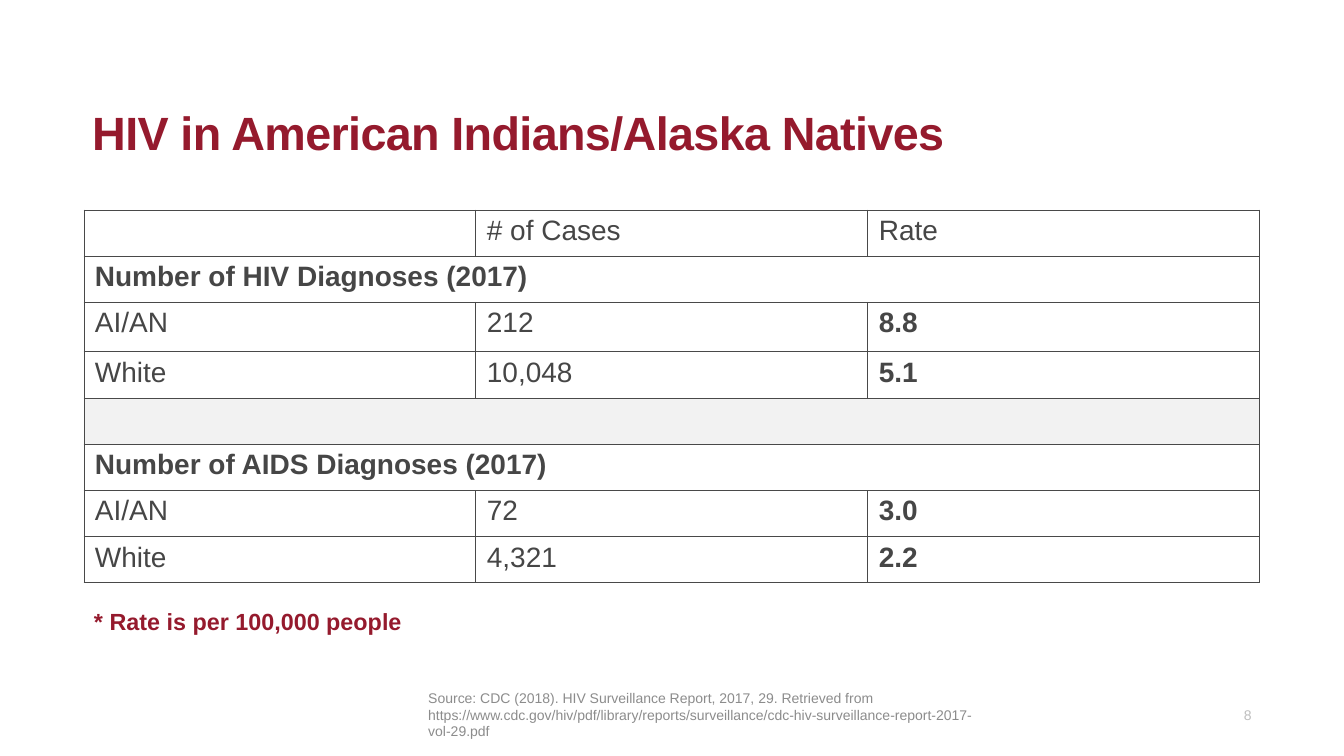
from dataclasses import dataclass, field

from lxml import etree
from pptx import Presentation
from pptx.dml.color import RGBColor
from pptx.enum.text import MSO_ANCHOR, PP_ALIGN
from pptx.oxml.ns import qn
from pptx.util import Inches, Pt

TOP, MID, LOW = MSO_ANCHOR.TOP, MSO_ANCHOR.MIDDLE, MSO_ANCHOR.BOTTOM
LEFT, RIGHT = PP_ALIGN.LEFT, PP_ALIGN.RIGHT

HUES = {
    "red": "951A2D",
    "text": "464646",
    "line": "494949",
    "band": "F2F2F2",
    "note": "8C8C8C",
    "page": "BEBEBE",
}

# Slide grid: 16 columns by 9 rows
WIDE, HIGH = Inches(16), Inches(9)
COL, ROW = WIDE / 16, HIGH / 9


@dataclass
class Label:
    text: str
    left: float
    top: float
    cols: float
    rows: float
    size: int
    hue: str
    bold: bool = False
    anchor: MSO_ANCHOR = TOP
    align: PP_ALIGN = LEFT
    pad: float = 0.05
    lead: float = 1.0
    track: int = 0


@dataclass
class Line:
    cells: list[str] = field(default_factory=list)
    rows: float = 0.55
    head: bool = False
    gap: bool = False


LABELS = [
    Label("HIV in American Indians/Alaska Natives", 1, 0.5, 14, 1.5, 40, "red",
          bold=True, anchor=LOW, pad=0.1, lead=0.85, track=-50),
    Label("8", 13, 8.28, 2, 0.45, 12, "page", anchor=MID, align=RIGHT),
    Label("Source: CDC (2018). HIV Surveillance Report, 2017, 29. Retrieved from "
          "https://www.cdc.gov/hiv/pdf/library/reports/surveillance/"
          "cdc-hiv-surveillance-report-2017-vol-29.pdf",
          5, 8.28, 7, 0.45, 12, "note", anchor=MID, pad=0.1),
    Label("* Rate is per 100,000 people", 1.02, 7.18, 4.92, 0.44, 20, "red", bold=True),
]

LINES = [
    Line(["", "# of Cases", "Rate"]),
    Line(["Number of HIV Diagnoses (2017)"], head=True),
    Line(["AI/AN", "212", "8.8"], rows=0.59),
    Line(["White", "10,048", "5.1"]),
    Line(gap=True),
    Line(["Number of AIDS Diagnoses (2017)"], head=True),
    Line(["AI/AN", "72", "3.0"]),
    Line(["White", "4,321", "2.2"]),
]


def put(thing, style: dict) -> None:
    for name, value in style.items():
        setattr(thing, name, value)


def write(para, text: str, size: int, hue: str, bold: bool):
    run = para.add_run()
    run.text = text
    put(run.font, {"name": "Arial", "size": Pt(size), "bold": bold})
    run.font.color.rgb = RGBColor.from_string(HUES[hue])
    return run


def add_label(slide, item: Label) -> None:
    box = slide.shapes.add_textbox(int(item.left * COL), int(item.top * ROW),
                                   int(item.cols * COL), int(item.rows * ROW))
    frame = box.text_frame
    put(frame, {
        "word_wrap": True,
        "vertical_anchor": item.anchor,
        "margin_top": Inches(item.pad),
        "margin_bottom": Inches(item.pad),
    })
    para = frame.paragraphs[0]
    put(para, {"alignment": item.align, "line_spacing": item.lead})
    run = write(para, item.text, item.size, item.hue, item.bold)
    if item.track:
        run._r.get_or_add_rPr().set("spc", str(item.track))


def add_edges(cell, shown: str) -> None:
    props = cell._tc.get_or_add_tcPr()
    for side in "LRTB":
        edge = etree.SubElement(props, qn(f"a:ln{side}"), w=str(Pt(1)))
        if side in shown:
            fill = etree.SubElement(edge, qn("a:solidFill"))
            etree.SubElement(fill, qn("a:srgbClr"), val=HUES["line"])
        else:
            etree.SubElement(edge, qn("a:noFill"))


def add_grid(slide, lines: list[Line], count: int = 3) -> None:
    high = sum(line.rows for line in lines)
    grid = slide.shapes.add_table(len(lines), count, int(COL), int(2.5 * ROW),
                                  int(14 * COL), int(high * ROW)).table
    put(grid, {"first_row": False, "horz_banding": False})
    for r, line in enumerate(lines):
        grid.rows[r].height = int(line.rows * ROW)
        for c in range(count):
            cell = grid.cell(r, c)
            put(cell, {
                "margin_left": Inches(0.13),
                "margin_right": Inches(0.13),
                "margin_top": Inches(0.06),
                "margin_bottom": Inches(0.06),
            })
            # The gap row has only its outer edges
            sides = "LRTB"
            if line.gap:
                sides = "TB" + "L" * (c == 0) + "R" * (c == count - 1)
            add_edges(cell, sides)
            if line.gap:
                cell.fill.solid()
                cell.fill.fore_color.rgb = RGBColor.from_string(HUES["band"])
            else:
                cell.fill.background()
            if c < len(line.cells) and line.cells[c]:
                bold = line.head or (r > 0 and c == count - 1)
                write(cell.text_frame.paragraphs[0], line.cells[c], 24, "text", bold)
        if line.head:
            grid.cell(r, 0).merge(grid.cell(r, count - 1))


def main() -> None:
    deck = Presentation()
    put(deck, {"slide_width": WIDE, "slide_height": HIGH})
    slide = deck.slides.add_slide(deck.slide_layouts[6])
    # Title, footer and footnote
    for item in LABELS:
        add_label(slide, item)
    # Table of cases and rates
    add_grid(slide, LINES)
    deck.save("out.pptx")


if __name__ == "__main__":
    main()
